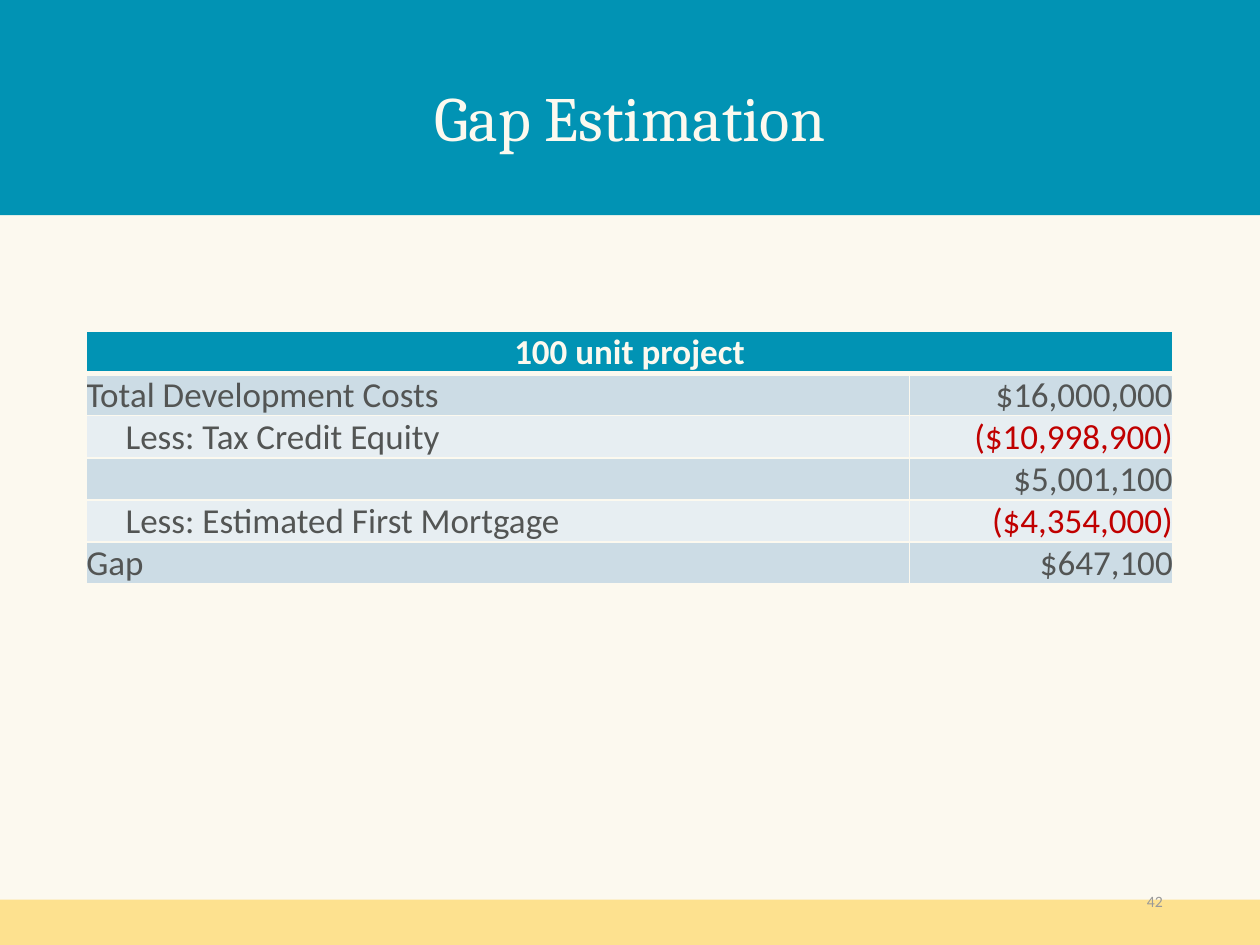
from dataclasses import dataclass
from lxml.etree import SubElement
from pptx import Presentation
from pptx.dml.color import RGBColor
from pptx.enum.shapes import MSO_SHAPE
from pptx.enum.text import MSO_ANCHOR, PP_ALIGN
from pptx.oxml.ns import qn
from pptx.util import Pt


@dataclass(frozen=True)
class Theme:
    cream: str = "FCF9EF"
    teal: str = "0193B4"
    gold: str = "FDE18F"
    ink: str = "535554"
    red: str = "C00000"
    gray: str = "999999"
    bands: tuple = ("CCDCE5", "E7EEF2")
    head: str = "Cambria"
    body: str = "Calibri"
    title: int = 36
    cell: int = 20
    note: int = 9


WIDE, HIGH = 720, 540
INDENT = 22.5
HEADING = "100 unit project"
ROWS = [  # label, amount, indent level
    ("Total Development Costs", "$16,000,000", 0),
    ("Less: Tax Credit Equity", "($10,998,900)", 1),
    ("", "$5,001,100", 0),
    ("Less: Estimated First Mortgage", "($4,354,000)", 1),
    ("Gap", "$647,100", 0),
]


def assign(target, values):
    for name, value in values.items():
        setattr(target, name, value)


def paint(fill, color):
    fill.solid()
    fill.fore_color.rgb = RGBColor.from_string(color)


class Deck:
    def __init__(self, theme):
        self.theme = theme
        self.file = Presentation()
        assign(self.file, {"slide_width": Pt(WIDE), "slide_height": Pt(HIGH)})
        self.slide = self.file.slides.add_slide(self.file.slide_layouts[6])
        paint(self.slide.background.fill, theme.cream)

    def band(self, top, height, color):
        shape = self.slide.shapes.add_shape(
            MSO_SHAPE.RECTANGLE, 0, Pt(top), Pt(WIDE), Pt(height))
        shape.shadow.inherit = False
        shape.line.fill.background()
        paint(shape.fill, color)

    def words(self, frame, text, color, size, font, align, bold=False, lead=None):
        para = frame.paragraphs[0]
        assign(para, {"alignment": align, "line_spacing": lead})
        run = para.add_run()
        run.text = text
        assign(run.font, {"name": font, "size": Pt(size), "bold": bold})
        run.font.color.rgb = RGBColor.from_string(color)

    def label(self, box, text, anchor, **style):
        frame = self.slide.shapes.add_textbox(*map(Pt, box)).text_frame
        assign(frame, {"word_wrap": True, "vertical_anchor": anchor,
                       "margin_left": Pt(6), "margin_right": Pt(6),
                       "margin_top": Pt(3), "margin_bottom": Pt(3)})
        self.words(frame, text, **style)

    def edge(self, cell, **widths):
        """Draw the cell's borders; must come before its fill."""
        props = cell._tc.get_or_add_tcPr()
        for side in "LRTB":
            line = SubElement(props, qn(f"a:ln{side}"),
                              w=str(Pt(widths.get(side, 1))))
            fill = SubElement(line, qn("a:solidFill"))
            SubElement(fill, qn("a:srgbClr"), val=self.theme.cream)

    def cell(self, cell, text, color, fill, align, bold=False, indent=0, **widths):
        assign(cell, {"margin_left": Pt(indent), "margin_right": 0,
                      "margin_top": 0, "margin_bottom": 0,
                      "vertical_anchor": MSO_ANCHOR.BOTTOM})
        self.edge(cell, **widths)
        paint(cell.fill, fill)
        if text:
            self.words(cell.text_frame, text, color, self.theme.cell,
                       self.theme.body, align, bold)

    def table(self, left, top, cols, step, heading, rows):
        look = self.theme
        count = len(rows) + 1
        grid = self.slide.shapes.add_table(
            count, len(cols), Pt(left), Pt(top),
            Pt(sum(cols)), Pt(step * count)).table
        for col, width in zip(grid.columns, cols):
            col.width = Pt(width)
        grid.cell(0, 0).merge(grid.cell(0, 1))
        for col, text in enumerate((heading, "")):
            self.cell(grid.cell(0, col), text, look.cream, look.teal,
                      PP_ALIGN.CENTER, bold=True, B=3)
        for row, (name, amount, level) in enumerate(rows, 1):
            fill = look.bands[(row - 1) % 2]
            rule = 3 if row == 1 else 1
            tone = look.red if amount.startswith("(") else look.ink
            self.cell(grid.cell(row, 0), name, look.ink, fill,
                      PP_ALIGN.LEFT, indent=level * INDENT, T=rule)
            self.cell(grid.cell(row, 1), amount, tone, fill,
                      PP_ALIGN.RIGHT, T=rule)


def main():
    look = Theme()
    deck = Deck(look)
    deck.band(514, 26, look.gold)
    deck.band(0, 123, look.teal)
    deck.label((90, 31, 540, 60.5), "Gap Estimation", MSO_ANCHOR.BOTTOM,
               color=look.cream, size=look.title, font=look.head,
               align=PP_ALIGN.CENTER, lead=0.9)
    deck.label((508.5, 500.5, 162, 29), "42", MSO_ANCHOR.MIDDLE,
               color=look.gray, size=look.note, font=look.body,
               align=PP_ALIGN.RIGHT)
    deck.table(49.3, 189.5, (470.3, 150.7), 24, HEADING, ROWS)
    deck.file.save("out.pptx")


if __name__ == "__main__":
    main()
